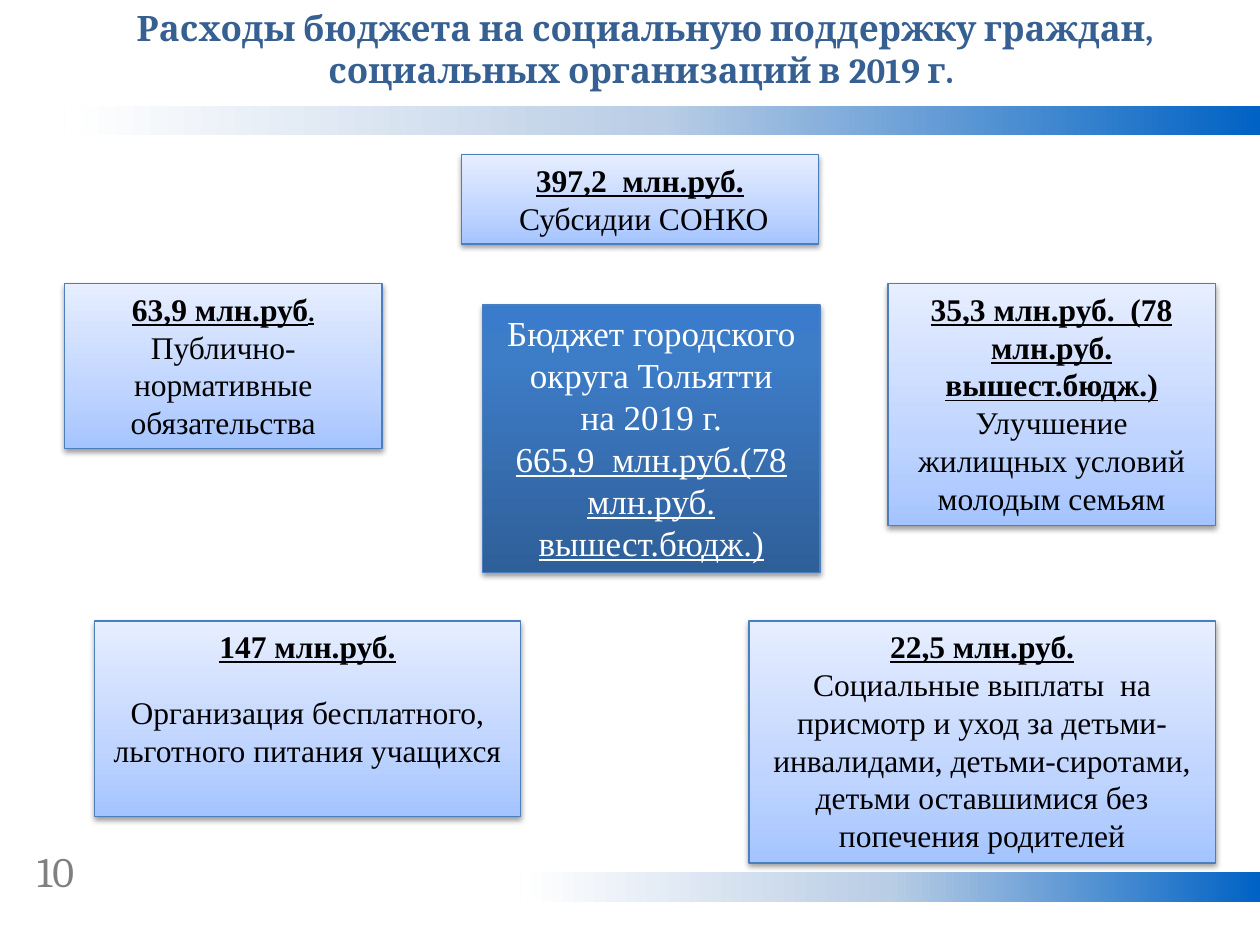
from lxml.etree import SubElement
from pptx import Presentation
from pptx.dml.color import RGBColor as RGB
from pptx.enum.shapes import MSO_SHAPE as Preset
from pptx.enum.text import MSO_ANCHOR as Anchor, MSO_AUTO_SIZE as AutoSize, PP_ALIGN as Align
from pptx.oxml.ns import qn
from pptx.util import Cm, Pt


def paint(shape, stops, angle):
    shape.shadow.inherit = False
    shape.fill.gradient()
    shape.fill.gradient_angle = angle
    stop_list = shape.fill._xPr.find(qn("a:gradFill")).find(qn("a:gsLst"))
    for old_stop in list(stop_list):
        stop_list.remove(old_stop)
    for percent, color in stops:
        stop = SubElement(stop_list, qn("a:gs"), pos=str(percent * 1000))
        SubElement(stop, qn("a:srgbClr"), val=color)


def write(shape, paragraphs, align):
    frame = shape.text_frame
    for name, value in FRAME.items():
        setattr(frame, name, value)
    for index, spans in enumerate(paragraphs):
        para = frame.paragraphs[0] if index == 0 else frame.add_paragraph()
        para.alignment = align
        for text, style in spans:
            span = para.add_run()
            span.text = text
            for name, value in style.items():
                if name == "color":
                    span.font.color.rgb = RGB.from_string(value)
                else:
                    setattr(span.font, name, value)


FRAME = {"word_wrap": True, "auto_size": AutoSize.NONE, "vertical_anchor": Anchor.TOP}
TITLE = {"name": "Cambria", "size": Pt(20), "bold": True, "color": "376092"}
NUMBER = {"name": "Cambria", "size": Pt(24), "color": "808080"}
PLAIN = {"name": "Times New Roman", "size": Pt(18), "color": "000000"}
AMOUNT = {**PLAIN, "bold": True, "underline": True}
CENTER = {**PLAIN, "size": Pt(20), "color": "FFFFFF"}
TOTAL = {**CENTER, "underline": True}

BAR_STOPS = [(0, "0062C4"), (50, "B9CDE5"), (100, "FFFFFF")]
LIGHT_STOPS = [(0, "A4C4FF"), (35, "BFD4FF"), (100, "E6EEFF")]
DARK_STOPS = [(0, "2F5F99"), (80, "3D7CC7"), (100, "3A7CCB")]

deck = Presentation()
deck.slide_width, deck.slide_height = Cm(25.4), Cm(19.05)
page = deck.slides.add_slide(deck.slide_layouts[5])

for left, top in [(1.3, 2.13), (10.49, 17.58)]:
    bar = page.shapes.add_shape(Preset.RECTANGLE, Cm(left), Cm(top), Cm(25.4 - left), Cm(0.6))
    paint(bar, BAR_STOPS, 180)
    bar.line.fill.background()

number = page.shapes.add_textbox(Cm(0.5), Cm(16.92), Cm(1.98), Cm(1.27))
write(number, [[("10", NUMBER)]], Align.LEFT)

boxes = [
    ((1.3, 5.72, 6.4, 3.33), LIGHT_STOPS, [
        [("63,9 млн.руб", AMOUNT), (".", {**AMOUNT, "size": Pt(14)})],
        [("Публично-нормативные обязательства", PLAIN)]]),
    ((17.9, 5.72, 6.6, 4.88), LIGHT_STOPS, [
        [("35,3 млн.руб.  (78 млн.руб. вышест.бюдж.)", AMOUNT)],
        [("Улучшение жилищных условий молодым семьям", PLAIN)]]),
    ((9.73, 6.15, 6.8, 5.4), DARK_STOPS, [
        [("Бюджет городского округа Тольятти", CENTER)],
        [("на 2019 г.", CENTER)],
        [("665,9  млн.руб.(78 млн.руб. вышест.бюдж.)", TOTAL)]]),
    ((9.3, 3.12, 7.2, 1.8), LIGHT_STOPS, [
        [("397,2  млн.руб.", AMOUNT)],
        [(" Субсидии СОНКО", PLAIN)]]),
    ((15.1, 12.52, 9.4, 4.88), LIGHT_STOPS, [
        [("22,5 млн.руб.", AMOUNT)],
        [("Социальные выплаты  на присмотр и уход за детьми-инвалидами, "
          "детьми-сиротами, детьми оставшимися без попечения родителей", PLAIN)]]),
    ((1.9, 12.52, 8.6, 3.94), LIGHT_STOPS, [
        [("147 млн.руб.", AMOUNT)],
        [("Организация бесплатного, льготного питания учащихся", PLAIN)]]),
]
for place, stops, paragraphs in boxes:
    box = page.shapes.add_shape(Preset.RECTANGLE, *[Cm(length) for length in place])
    paint(box, stops, 90)
    box.line.color.rgb = RGB.from_string("4B7EBC")
    box.line.width = Pt(0.75)
    effects = box._element.spPr.find(qn("a:effectLst"))
    shadow = SubElement(effects, qn("a:outerShdw"), blurRad="40000", dist="20000",
                        dir="5400000", rotWithShape="0")
    shade = SubElement(shadow, qn("a:srgbClr"), val="000000")
    SubElement(shade, qn("a:alpha"), val="38000")
    write(box, paragraphs, Align.CENTER)
box.text_frame.paragraphs[1].space_before = Pt(16)

title = page.shapes.title
place = {"left": 0.9, "top": 0, "width": 24.2, "height": 1.96}
for name, length in place.items():
    setattr(title, name, Cm(length))
write(title, [[("Расходы бюджета на социальную поддержку граждан, "
                "социальных организаций в 2019 г. ", TITLE)]], Align.CENTER)

deck.save("out.pptx")
